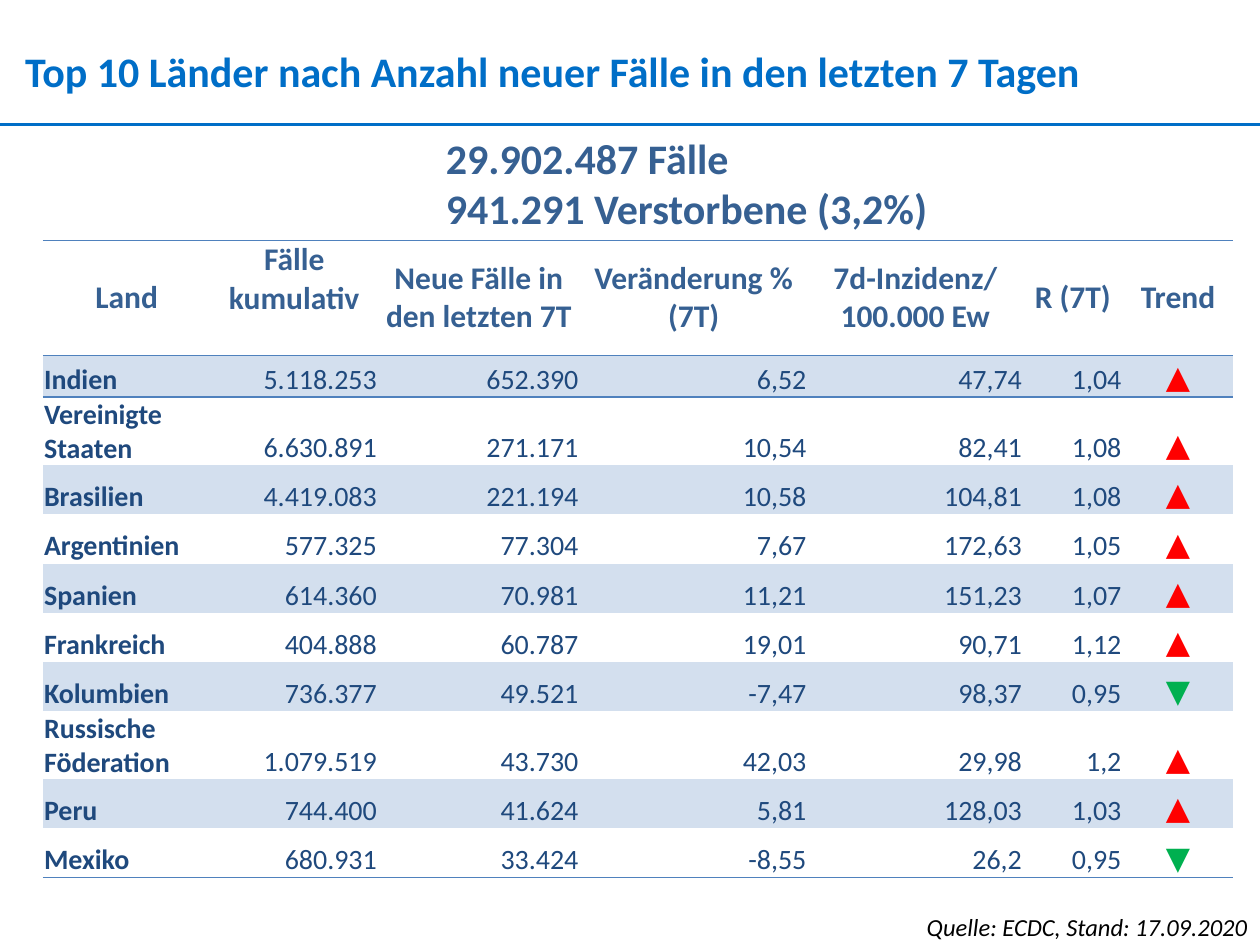
from dataclasses import dataclass
from typing import Optional

import lxml.etree
import pptx
import pptx.dml.color
import pptx.enum.shapes
import pptx.enum.text
import pptx.oxml
import pptx.oxml.ns
import pptx.util

Inches = pptx.util.Inches
Align = pptx.enum.text.PP_ALIGN
Anchor = pptx.enum.text.MSO_ANCHOR
qn = pptx.oxml.ns.qn


@dataclass(frozen=True)
class Theme:
    font: str = "Calibri"
    title_color: str = "006EC7"
    heading_color: str = "366092"
    body_color: str = "1F497D"
    source_color: str = "000000"
    rule_color: str = "4F81BD"
    band_color: str = "D3DFEE"
    rising_color: str = "FF0000"
    falling_color: str = "00B050"
    title_size: float = 24
    heading_size: float = 18
    body_size: float = 16
    source_size: float = 14
    title_rule_width: float = 1.5
    table_rule_width: float = 1


THEME = Theme()
NO_STYLE = "{2D5ABB26-0587-4C30-8999-92F81FD0307C}"


@dataclass(frozen=True)
class Column:
    heading: str
    width: float
    align: Align = Align.RIGHT
    heading_bottom: float = 0


@dataclass(frozen=True)
class Country:
    name: str
    figures: tuple[str, ...]
    rising: bool = True
    height: float = 0.39


COLUMNS = (
    Column("Land", 1.33, Align.LEFT),
    Column("Fälle kumulativ", 1.33, heading_bottom=0.3),
    Column("Neue Fälle in den letzten 7T", 1.6),
    Column("Veränderung % (7T)", 1.81),
    Column("7d-Inzidenz/ 100.000 Ew", 1.71),
    Column("R (7T)", 0.79),
    Column("Trend", 0.88, Align.CENTER),
)
HEADING_HEIGHT = 0.91
COUNTRIES = (
    Country("Indien", ("5.118.253", "652.390", "6,52", "47,74", "1,04"), height=0.33),
    Country("Vereinigte Staaten", ("6.630.891", "271.171", "10,54", "82,41", "1,08"), height=0.54),
    Country("Brasilien", ("4.419.083", "221.194", "10,58", "104,81", "1,08")),
    Country("Argentinien", ("577.325", "77.304", "7,67", "172,63", "1,05")),
    Country("Spanien", ("614.360", "70.981", "11,21", "151,23", "1,07")),
    Country("Frankreich", ("404.888", "60.787", "19,01", "90,71", "1,12")),
    Country("Kolumbien", ("736.377", "49.521", "-7,47", "98,37", "0,95"), rising=False),
    Country("Russische Föderation", ("1.079.519", "43.730", "42,03", "29,98", "1,2"), height=0.54),
    Country("Peru", ("744.400", "41.624", "5,81", "128,03", "1,03")),
    Country("Mexiko", ("680.931", "33.424", "-8,55", "26,2", "0,95"), rising=False),
)


def rgb(color: str) -> pptx.dml.color.RGBColor:
    return pptx.dml.color.RGBColor.from_string(color)


def write_text(frame, text: str, *, size: float, color: str, bold: bool = False,
               italic: bool = False, align: Optional[Align] = None) -> None:
    """Fill a text frame, one paragraph for each line of text."""
    for index, line in enumerate(text.split("\n")):
        paragraph = frame.add_paragraph() if index else frame.paragraphs[0]
        paragraph.alignment = align
        run = paragraph.add_run()
        run.text = line
        run.font.name = THEME.font
        run.font.size = pptx.util.Pt(size)
        run.font.bold = bold
        run.font.italic = italic
        run.font.color.rgb = rgb(color)


def add_text_box(slide, left: float, top: float, width: float, height: float,
                 text: str, *, wrap: bool = True, inset: Optional[float] = None, **text_format) -> None:
    frame = slide.shapes.add_textbox(Inches(left), Inches(top), Inches(width), Inches(height)).text_frame
    frame.word_wrap = wrap
    if inset is not None:
        frame.margin_left = frame.margin_right = Inches(inset)
        frame.margin_top = frame.margin_bottom = Inches(inset)
    write_text(frame, text, **text_format)


def add_title_rule(slide, top: float, width: float) -> None:
    rule = slide.shapes.add_connector(
        pptx.enum.shapes.MSO_CONNECTOR.STRAIGHT, 0, Inches(top), Inches(width), Inches(top))
    rule.line.color.rgb = rgb(THEME.title_color)
    rule.line.width = pptx.util.Pt(THEME.title_rule_width)
    lxml.etree.SubElement(rule.element.spPr, qn("a:effectLst"))


def add_border(cell, side: str) -> None:
    properties = cell.text_frame._txBody.getparent().get_or_add_tcPr()
    line = lxml.etree.SubElement(properties, qn(f"a:{side}"))
    line.set("w", str(pptx.util.Pt(THEME.table_rule_width)))
    fill = lxml.etree.SubElement(line, qn("a:solidFill"))
    lxml.etree.SubElement(fill, qn("a:srgbClr")).set("val", THEME.rule_color)


def format_cell(cell, text: str, *, anchor: Anchor, margins: tuple[float, float, float],
                borders: tuple[str, ...] = (), fill: Optional[str] = None, **text_format) -> None:
    """Set one cell; margins are side, top and bottom."""
    side, top, bottom = margins
    cell.vertical_anchor = anchor
    cell.margin_left = cell.margin_right = Inches(side)
    cell.margin_top, cell.margin_bottom = Inches(top), Inches(bottom)
    for border in borders:
        add_border(cell, border)
    if fill:
        cell.fill.solid()
        cell.fill.fore_color.rgb = rgb(fill)
    else:
        cell.fill.background()
    write_text(cell.text_frame, text, **text_format)


def add_country_table(slide, left: float, top: float) -> None:
    heights = [HEADING_HEIGHT] + [country.height for country in COUNTRIES]
    widths = [column.width for column in COLUMNS]
    shape = slide.shapes.add_table(len(heights), len(widths), Inches(left), Inches(top),
                                   Inches(sum(widths)), Inches(sum(heights)))
    for style in shape.element.iter(qn("a:tableStyleId")):
        style.text = NO_STYLE
    table = shape.table
    for table_row, height in zip(table.rows, heights):
        table_row.height = Inches(height)

    # Headings
    for index, column in enumerate(COLUMNS):
        table.columns[index].width = Inches(column.width)
        format_cell(table.cell(0, index), column.heading, anchor=Anchor.MIDDLE,
                    margins=(0.06, 0, column.heading_bottom), borders=("lnT", "lnB"),
                    size=THEME.heading_size, color=THEME.heading_color, bold=True, align=Align.CENTER)

    # Countries: every other row is banded, the last column shows the trend
    for row, country in enumerate(COUNTRIES, start=1):
        trend = "▲" if country.rising else "▼"
        trend_color = THEME.rising_color if country.rising else THEME.falling_color
        borders = ("lnT",) if row == 1 else ("lnB",) if row == len(COUNTRIES) else ()
        for index, text in enumerate((country.name, *country.figures, trend)):
            is_trend = index == len(COLUMNS) - 1
            format_cell(table.cell(row, index), text, anchor=Anchor.BOTTOM, margins=(0.01, 0.01, 0),
                        borders=borders, fill=THEME.band_color if row % 2 else None,
                        size=THEME.heading_size if is_trend else THEME.body_size,
                        color=trend_color if is_trend else THEME.body_color,
                        bold=index == 0, align=COLUMNS[index].align)


def main() -> None:
    presentation = pptx.Presentation()
    presentation.slide_width, presentation.slide_height = Inches(10), Inches(7.5)
    slide = presentation.slides.add_slide(presentation.slide_layouts[6])

    # Title and totals
    add_text_box(slide, 0.2, 0.36, 9.63, 0.4, "Top 10 Länder nach Anzahl neuer Fälle in den letzten 7 Tagen",
                 inset=0, size=THEME.title_size, color=THEME.title_color, bold=True)
    add_title_rule(slide, 0.99, 10)
    add_text_box(slide, 3.44, 1, 4.21, 0.91, "29.902.487 Fälle\n941.291 Verstorbene (3,2%)", wrap=False,
                 size=THEME.title_size, color=THEME.heading_color, bold=True, align=Align.LEFT)

    # Source and table
    add_text_box(slide, 6.46, 7.19, 3.54, 0.34, "Quelle: ECDC, Stand: 17.09.2020",
                 size=THEME.source_size, color=THEME.source_color, italic=True, align=Align.RIGHT)
    add_country_table(slide, 0.34, 1.91)
    presentation.save("out.pptx")


if __name__ == "__main__":
    main()
